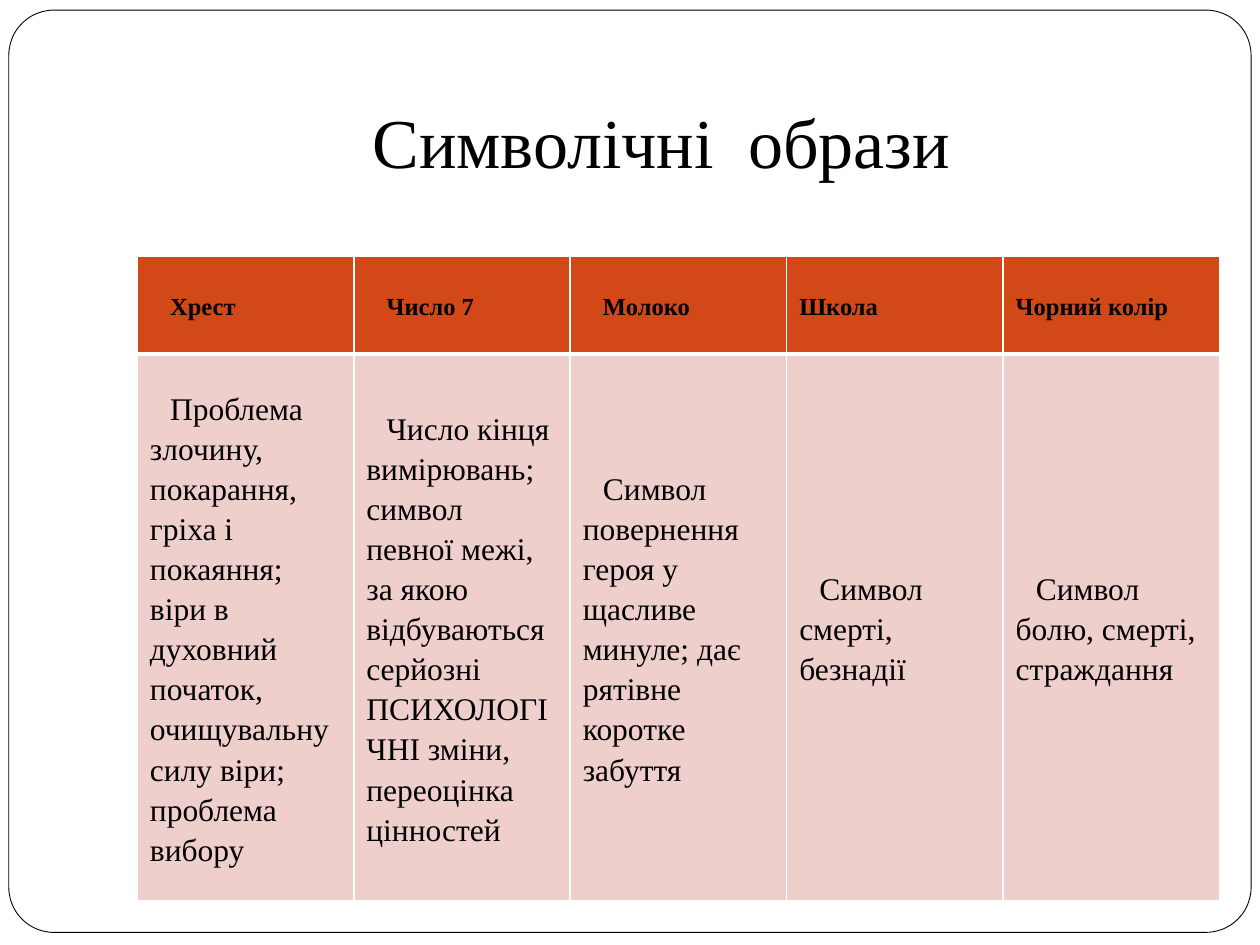
from pptx import Presentation
from pptx.dml.color import RGBColor
from pptx.enum.shapes import MSO_SHAPE
from pptx.enum.text import MSO_ANCHOR, PP_ALIGN
from pptx.oxml.ns import qn
from pptx.util import Inches, Pt
from lxml import etree

ROUNDED = MSO_SHAPE.ROUNDED_RECTANGLE
MIDDLE, BOTTOM = MSO_ANCHOR.MIDDLE, MSO_ANCHOR.BOTTOM
LEFT, CENTER = PP_ALIGN.LEFT, PP_ALIGN.CENTER
FONT = "Times New Roman"
BLACK, WHITE, ORANGE, PINK = "000000", "FFFFFF", "D34817", "EFCFCC"
INDENT = 0.16

SYMBOLS = [
    ("Хрест", INDENT, "Проблема злочину, покарання, гріха і покаяння; віри в духовний "
     "початок, очищувальну силу віри; проблема вибору"),
    ("Число 7", INDENT, "Число кінця вимірювань; символ певної межі, за якою відбуваються "
     "серйозні ПСИХОЛОГІЧНІ зміни, переоцінка цінностей"),
    ("Молоко", INDENT, "Символ повернення героя у щасливе минуле; дає рятівне коротке забуття"),
    ("Школа", 0, "Символ смерті, безнадії"),
    ("Чорний колір", 0, "Символ болю, смерті, страждання"),
]


def rgb(color):
    """Return the colour for a hex string."""
    return RGBColor.from_string(color)


def write(tf, text, size, bold=False, align=LEFT, indent=0, spacing=None, after=None):
    """Write one formatted paragraph into a text frame."""
    p = tf.paragraphs[0]
    p.alignment, p.line_spacing = align, spacing
    if after is not None:
        p.space_after = Pt(after)
    if indent:
        pPr = p._p.get_or_add_pPr()
        pPr.set("marL", "0")
        pPr.set("indent", str(Inches(indent)))
    r = p.add_run()
    r.text = text
    r.font.name, r.font.size, r.font.bold = FONT, Pt(size), bold
    r.font.color.rgb = rgb(BLACK)


def add_frame(s):
    """Draw the rounded frame around the slide."""
    sp = s.shapes.add_shape(ROUNDED, Inches(0.07), Inches(0.08), Inches(9.86), Inches(7.32))
    sp.adjustments[0] = 0.049
    sp.shadow.inherit = False
    sp.fill.solid()
    sp.fill.fore_color.rgb = rgb(WHITE)
    sp.line.color.rgb = rgb(BLACK)
    sp.line.width = Pt(0.5)


def add_title(s, text):
    """Add the centred slide title."""
    tf = s.shapes.add_textbox(Inches(1), Inches(0.3), Inches(8.5), Inches(1.25)).text_frame
    tf.word_wrap = True
    tf.vertical_anchor = BOTTOM
    tf.margin_bottom = Inches(0.1)
    write(tf, text, 40, align=CENTER)


def set_borders(cell, **widths):
    """Give a cell white borders with widths in points by side."""
    tcPr = cell._tc.get_or_add_tcPr()
    for side, width in widths.items():
        ln = etree.SubElement(tcPr, qn(f"a:ln{side}"), w=str(Pt(width)))
        fill = etree.SubElement(ln, qn("a:solidFill"))
        etree.SubElement(fill, qn("a:srgbClr"), val=WHITE)


def fill_cell(cell, text, color, size, top=1, bottom=1, **fmt):
    """Set the text, borders and fill of a table cell."""
    cell.vertical_anchor = MIDDLE
    cell.margin_left = cell.margin_right = Inches(0.1)
    cell.margin_top = cell.margin_bottom = Inches(0.1)
    set_borders(cell, L=1, R=1, T=top, B=bottom)
    cell.fill.solid()
    cell.fill.fore_color.rgb = rgb(color)
    write(cell.text_frame, text, size, spacing=1.15, after=10, **fmt)


def add_symbols_table(s):
    """Add the table of symbols and their meanings."""
    table = s.shapes.add_table(2, len(SYMBOLS), Inches(1.09), Inches(2.03),
                               Inches(8.59), Inches(5.08)).table
    table.horz_banding = False
    for row, height in zip(table.rows, (0.78, 4.3)):
        row.height = Inches(height)
    for i, (name, indent, meaning) in enumerate(SYMBOLS):
        fill_cell(table.cell(0, i), name, ORANGE, 14, bottom=3, bold=True, indent=indent)
        fill_cell(table.cell(1, i), meaning, PINK, 18, top=3, indent=INDENT)


def main():
    """Build and save the slide."""
    prs = Presentation()
    prs.slide_width, prs.slide_height = Inches(10), Inches(7.5)
    s = prs.slides.add_slide(prs.slide_layouts[6])
    add_frame(s)
    add_title(s, "Символічні  образи")
    add_symbols_table(s)
    prs.save("out.pptx")


if __name__ == "__main__":
    main()
